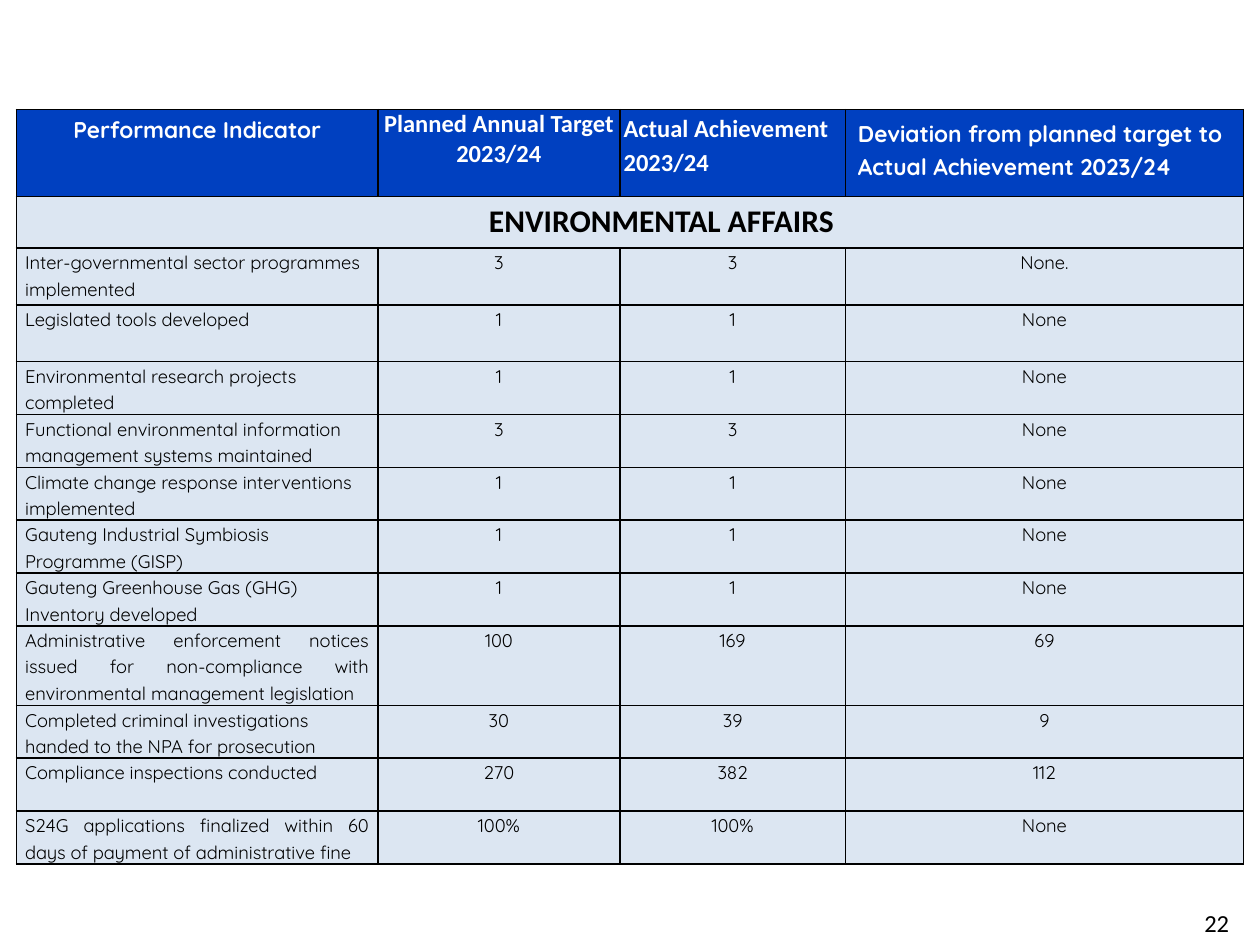
"""Build the environmental affairs performance table slide."""
from lxml.etree import SubElement
from pptx import Presentation
from pptx.dml.color import RGBColor
from pptx.enum.text import PP_ALIGN
from pptx.oxml.ns import qn
from pptx.util import Inches, Pt

COLORS = {"header": "0040C0", "body": "DCE6F2", "white": "FFFFFF", "black": "000000"}
COLUMNS = [2.87, 1.92, 1.79, 3.16]
LINE = 0.21
ROWS = [0.69, 0.41, 0.45, 0.45] + [LINE * lines for lines in (2, 2, 2, 2, 2, 3, 2, 2, 2)]
TIGHT, SLIM, ROOMY = (0.03, 0), (0.07, 0), (0.1, 0.05)
LEFT, CENTER, JUSTIFY = PP_ALIGN.LEFT, PP_ALIGN.CENTER, PP_ALIGN.JUSTIFY

HEADERS = [
    ("Performance Indicator", "Quicksand", 13, ROOMY, {"alignment": CENTER}),
    ("Planned Annual Target 2023/24", "Calibri", 14, TIGHT, {"alignment": CENTER}),
    ("Actual Achievement 2023/24", "Calibri", 14, TIGHT,
     {"alignment": LEFT, "line_spacing": 1.15, "space_after": Pt(8)}),
    ("Deviation from planned target to Actual Achievement 2023/24", "Quicksand", 13, ROOMY,
     {"alignment": LEFT, "line_spacing": 1.15, "space_after": Pt(8)}),
]
INDICATORS = [
    ("Inter-governmental sector programmes implemented", "3", "3", "None."),
    ("Legislated tools developed", "1", "1", "None"),
    ("Environmental research projects completed", "1", "1", "None"),
    ("Functional environmental information management systems maintained", "3", "3", "None"),
    ("Climate change response interventions implemented", "1", "1", "None"),
    ("Gauteng Industrial Symbiosis Programme (GISP)", "1", "1", "None"),
    ("Gauteng Greenhouse Gas (GHG) Inventory developed", "1", "1", "None"),
    ("Administrative enforcement notices issued for non-compliance with "
     "environmental management legislation", "100", "169", "69"),
    ("Completed criminal investigations handed to the NPA for prosecution", "30", "39", "9"),
    ("Compliance inspections conducted", "270", "382", "112"),
    ("S24G applications finalized within 60 days of payment of administrative fine",
     "100%", "100%", "None"),
]
JUSTIFIED = ("Administrative", "S24G")


def write(frame, text, font, paragraph_format):
    paragraph = frame.paragraphs[0]
    for name, value in paragraph_format.items():
        setattr(paragraph, name, value)
    run = paragraph.add_run()
    run.text = text
    for name, value in font.items():
        if name == "color":
            run.font.color.rgb = RGBColor.from_string(COLORS[value])
        else:
            setattr(run.font, name, value)
    return paragraph


def fill_cell(cell, text, fill, margins, font, paragraph_format):
    cell.margin_left = cell.margin_right = Inches(margins[0])
    cell.margin_top = cell.margin_bottom = Inches(margins[1])
    cell.fill.solid()
    cell.fill.fore_color.rgb = RGBColor.from_string(COLORS[fill])
    return write(cell.text_frame, text, font, paragraph_format)


presentation = Presentation()
presentation.slide_width, presentation.slide_height = Inches(10), Inches(7.5)
slide = presentation.slides.add_slide(presentation.slide_layouts[6])

table = slide.shapes.add_table(
    len(ROWS), len(COLUMNS), Inches(0.13), Inches(0.87),
    Inches(sum(COLUMNS)), Inches(sum(ROWS))).table
table.first_row = table.horz_banding = False
for column, width in zip(table.columns, COLUMNS):
    column.width = Inches(width)
for row, height in zip(table.rows, ROWS):
    row.height = Inches(height)

for cell in table.iter_cells():
    properties = cell._tc.get_or_add_tcPr()
    for side in ("lnL", "lnR", "lnT", "lnB"):
        border = SubElement(properties, qn(f"a:{side}"), w=str(Pt(1)))
        border_fill = SubElement(border, qn("a:solidFill"))
        SubElement(border_fill, qn("a:srgbClr"), val=COLORS["black"])

for index, (text, family, size, margins, paragraph_format) in enumerate(HEADERS):
    font = {"name": family, "size": Pt(size), "bold": True, "color": "white"}
    fill_cell(table.cell(0, index), text, "header", margins, font, paragraph_format)

section = table.cell(1, 0)
section.merge(table.cell(1, len(COLUMNS) - 1))
section_font = {"name": "Calibri", "size": Pt(18), "bold": True, "color": "black"}
heading = fill_cell(section, "ENVIRONMENTAL AFFAIRS", "body", ROOMY, section_font,
                    {"alignment": CENTER, "level": 1})
heading_properties = heading._p.get_or_add_pPr()
heading_properties.set("marL", str(Inches(0.5)))
heading_properties.set("indent", "0")

body_font = {"name": "Quicksand", "size": Pt(10.5), "bold": False, "color": "black"}
for row_index, values in enumerate(INDICATORS, start=2):
    first_alignment = JUSTIFY if values[0].startswith(JUSTIFIED) else LEFT
    for column_index, text in enumerate(values):
        alignment = CENTER if column_index else first_alignment
        fill_cell(table.cell(row_index, column_index), text, "body", SLIM, body_font,
                  {"alignment": alignment, "line_spacing": 1.15, "space_after": Pt(3)})

page_number = slide.shapes.add_textbox(Inches(9.46), Inches(7.16), Inches(0.5), Inches(0.4))
page_number.text_frame.word_wrap = True
write(page_number.text_frame, "22", {"name": "Calibri", "size": Pt(14), "color": "black"},
      {"alignment": LEFT})

presentation.save("out.pptx")
